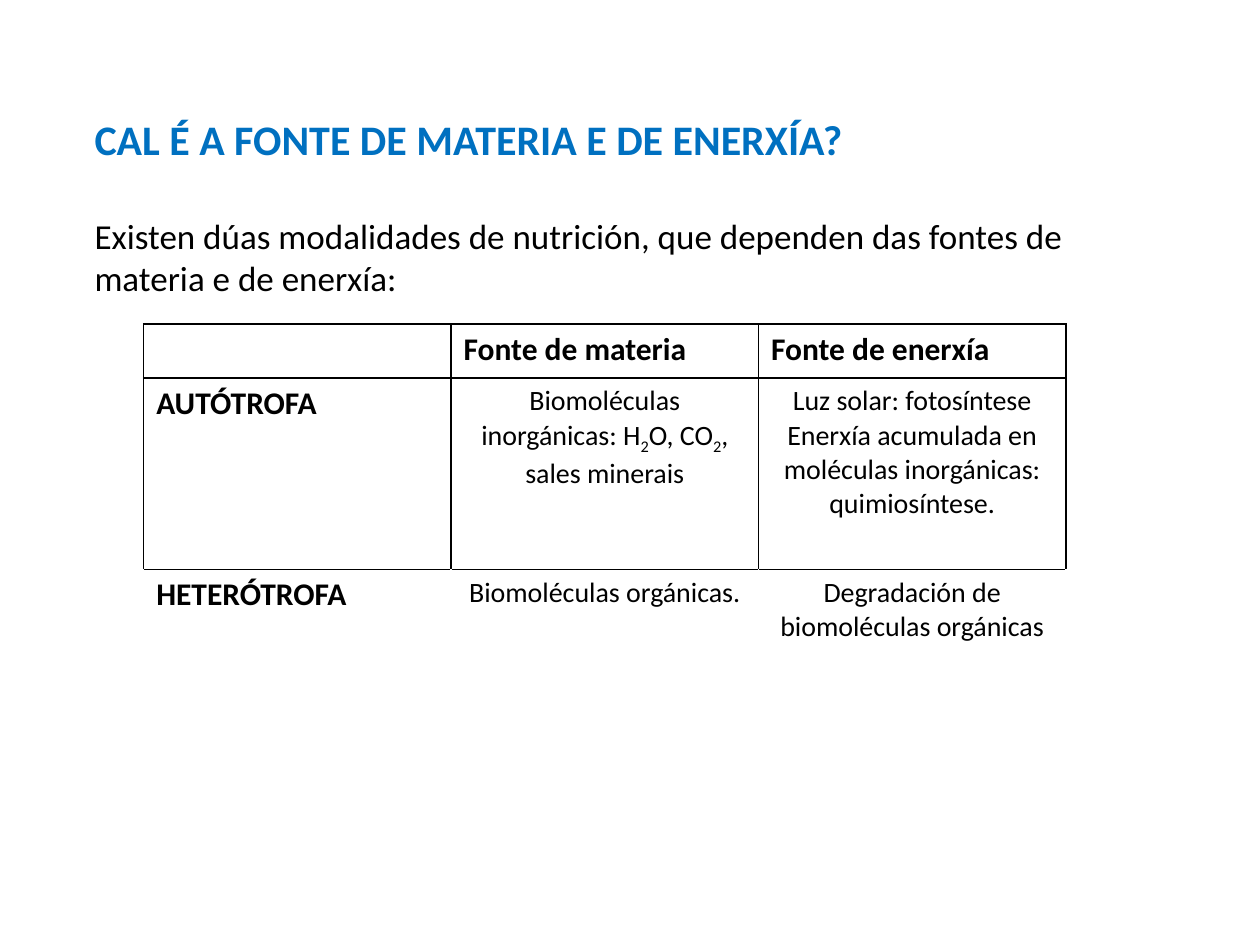
from lxml.etree import SubElement
from pptx import Presentation
from pptx.dml.color import RGBColor as Rgb
from pptx.enum.text import MSO_ANCHOR as Anchor, PP_ALIGN as Align
from pptx.oxml.ns import qn
from pptx.util import Inches, Pt

BLUE, BLACK, WHITE = "0070C0", "000000", "FFFFFF"
LEFT, MID = Align.LEFT, Align.CENTER
ROWS = [
    ["", "Fonte de materia", "Fonte de enerxía"],
    ["AUTÓTROFA", "Biomoléculas inorgánicas: H_2_O, CO_2_, sales minerais",
     "Luz solar: fotosíntese\n"
     "Enerxía acumulada en moléculas inorgánicas: quimiosíntese."],
    ["HETERÓTROFA", "Biomoléculas orgánicas.",
     "Degradación de biomoléculas orgánicas"],
]


def color(code):
    return Rgb.from_string(code)


class Deck:
    face = "Calibri"
    line = 0.96

    def __init__(self, wide, high):
        self.prs = Presentation()
        self.prs.slide_width = Inches(wide)
        self.prs.slide_height = Inches(high)
        self.slide = self.prs.slides.add_slide(self.prs.slide_layouts[5])

    def box(self, x, y, w, h):
        wide, high = self.prs.slide_width, self.prs.slide_height
        return int(x * wide), int(y * high), int(w * wide), int(h * high)

    def style(self, par, size, tint, bold, align):
        par.alignment = align
        font = par.font
        font.name, font.size, font.bold = self.face, Pt(size), bold
        font.color.rgb = color(tint)

    def fill_text(self, par, text):
        for i, part in enumerate(text.split("_")):
            run = par.add_run()
            run.text = part
            if i % 2:
                run._r.get_or_add_rPr().set("baseline", "-25000")

    def title(self, area, head, body, gap):
        shape = self.slide.shapes.title
        shape.left, shape.top, shape.width, shape.height = self.box(*area)
        frame = shape.text_frame
        frame.word_wrap = True
        frame.vertical_anchor = Anchor.TOP
        frame.margin_left = frame.margin_right = frame.margin_bottom = 0
        frame.margin_top = Inches(0.15)
        frame.text = f"{head}\n{body}"
        first, last = frame.paragraphs
        self.style(first, 24, BLUE, True, LEFT)
        self.style(last, 20, BLACK, False, LEFT)
        last.space_before = Pt(gap)

    def edges(self, cell, tints):
        props = cell._tc.get_or_add_tcPr()
        for side, tint in zip("LRTB", tints):
            edge = SubElement(props, qn(f"a:ln{side}"), w=str(Pt(self.line)))
            fill = SubElement(edge, qn("a:solidFill"))
            SubElement(fill, qn("a:srgbClr"), val=tint)

    def cell(self, cell, text, label, tints):
        self.edges(cell, tints)
        cell.fill.background()
        frame = cell.text_frame
        for i, line in enumerate(text.split("\n")):
            par = frame.add_paragraph() if i else frame.paragraphs[0]
            if line:
                self.fill_text(par, line)
            self.style(par, 18 if label else 16, BLACK, label,
                       LEFT if label else MID)

    def table(self, area, rows, highs):
        grid = self.slide.shapes.add_table(
            len(rows), len(rows[0]), *self.box(*area)).table
        grid.first_row = grid.horz_banding = False
        for r, row in enumerate(rows):
            grid.rows[r].height = Inches(highs[r])
            rest = WHITE if r == len(rows) - 1 else BLACK
            for c, text in enumerate(row):
                self.cell(grid.cell(r, c), text, r == 0 or c == 0,
                          (rest, rest, BLACK, rest))

    def save(self):
        self.prs.save("out.pptx")


def main():
    deck = Deck(10, 7.5)
    deck.title((0.075, 0.1, 0.85, 0.28),
               "CAL É A FONTE DE MATERIA E DE ENERXÍA?",
               "Existen dúas modalidades de nutrición, que dependen das "
               "fontes de materia e de enerxía:", 29)
    deck.table((0.114, 2.57 / 7.5, 0.732, 2.91 / 7.5), ROWS,
               (0.43, 1.52, 0.96))
    deck.save()


if __name__ == "__main__":
    main()
